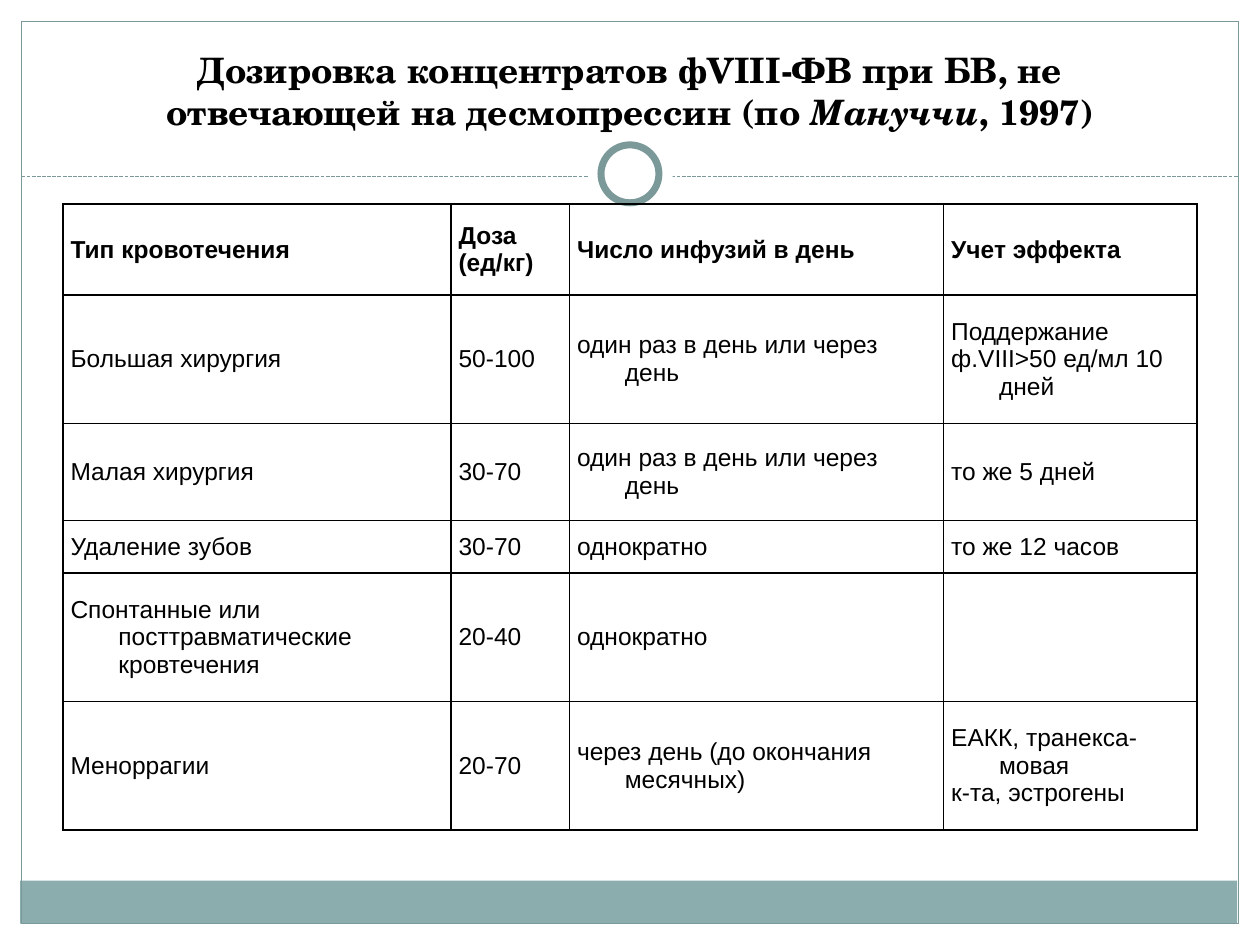
from lxml.etree import SubElement
from pptx import Presentation
from pptx.dml.color import RGBColor
from pptx.enum.dml import MSO_LINE
from pptx.enum.shapes import MSO_CONNECTOR, MSO_SHAPE
from pptx.enum.text import MSO_ANCHOR, PP_ALIGN
from pptx.oxml.ns import qn
from pptx.util import Inches, Pt

COLORS = {"white": "FFFFFF", "black": "000000", "band": "8CADAE", "frame": "7C999A"}
TITLE_FONT = "TeX Gyre Schola"
TABLE_FONT = "Arial"

TITLE_RUNS = [
    ("Дозировка концентратов фVIII-ФВ при БВ, не отвечающей на десмопрессин (по ", False),
    ("Мануччи", True),
    (", 1997)", False),
]
COLUMN_WIDTHS = [3.08, 0.94, 2.97, 2.01]
ROW_HEIGHTS = [0.72, 1.02, 0.77, 0.42, 1.02, 1.02]
DOSAGE_ROWS = [
    ["Тип кровотечения", "Доза\n(ед/кг)", "Число инфузий в день", "Учет эффекта"],
    ["Большая хирургия", "50-100", "один раз в день или через день",
     "Поддержание\nф.VIII>50 ед/мл 10 дней"],
    ["Малая хирургия", "30-70", "один раз в день или через день", "то же 5 дней"],
    ["Удаление зубов", "30-70", "однократно", "то же 12 часов"],
    ["Спонтанные или посттравматические кровтечения", "20-40", "однократно", ""],
    ["Меноррагии", "20-70", "через день (до окончания месячных)",
     "ЕАКК, транекса-мовая\nк-та, эстрогены"],
]


def rgb(name):
    return RGBColor.from_string(COLORS[name])


def style_font(font, name, size, bold):
    font.name = name
    font.size = Pt(size)
    font.bold = bold
    font.color.rgb = rgb("black")


def add_shape(slide, kind, box, fill=None, line=None, line_width=0.75):
    shape = slide.shapes.add_shape(kind, *map(Inches, box))
    shape.shadow.inherit = False
    if fill:
        shape.fill.solid()
        shape.fill.fore_color.rgb = rgb(fill)
    else:
        shape.fill.background()
    if line:
        shape.line.color.rgb = rgb(line)
        shape.line.width = Pt(line_width)
    else:
        shape.line.fill.background()


def add_dashed_line(slide, left, right, top):
    line = slide.shapes.add_connector(
        MSO_CONNECTOR.STRAIGHT, Inches(left), Inches(top), Inches(right), Inches(top))
    line.line.color.rgb = rgb("frame")
    line.line.width = Pt(0.75)
    line.line.dash_style = MSO_LINE.SQUARE_DOT
    properties = line._element.spPr
    properties.find(qn("a:ln")).find(qn("a:prstDash")).set("val", "sysDash")
    SubElement(properties, qn("a:effectLst"))


def add_title(slide):
    frame = slide.shapes.add_textbox(
        Inches(0.5), Inches(0.16), Inches(9), Inches(0.94)).text_frame
    frame.word_wrap = True
    frame.vertical_anchor = MSO_ANCHOR.BOTTOM
    paragraph = frame.paragraphs[0]
    paragraph.alignment = PP_ALIGN.CENTER
    style_font(paragraph.font, TITLE_FONT, 20, True)
    for text, italic in TITLE_RUNS:
        run = paragraph.add_run()
        run.text = text
        # Each run carries the font so that it holds in every viewer
        style_font(run.font, TITLE_FONT, 20, True)
        run.font.italic = italic


def set_borders(cell):
    properties = cell._tc.get_or_add_tcPr()
    for side in ("lnL", "lnR", "lnT", "lnB"):
        border = SubElement(properties, qn(f"a:{side}"), w=str(Pt(1)))
        fill = SubElement(border, qn("a:solidFill"))
        SubElement(fill, qn("a:srgbClr"), val=COLORS["black"])


def fill_cell(cell, text, bold):
    cell.text = text
    cell.vertical_anchor = MSO_ANCHOR.MIDDLE
    cell.margin_left = cell.margin_right = Inches(0.06)
    cell.margin_top = cell.margin_bottom = Inches(0.05)
    set_borders(cell)
    cell.fill.background()
    for paragraph in cell.text_frame.paragraphs:
        # Hanging indent
        properties = paragraph._p.get_or_add_pPr()
        properties.set("marL", str(Inches(0.38)))
        properties.set("indent", str(Inches(-0.38)))
        style_font(paragraph.font, TABLE_FONT, 14, bold)


def add_dosage_table(slide):
    table = slide.shapes.add_table(
        len(ROW_HEIGHTS), len(COLUMN_WIDTHS), Inches(0.5), Inches(1.62),
        Inches(sum(COLUMN_WIDTHS)), Inches(sum(ROW_HEIGHTS))).table
    table.horz_banding = False
    for column, width in zip(table.columns, COLUMN_WIDTHS):
        column.width = Inches(width)
    for index, (row, height) in enumerate(zip(table.rows, ROW_HEIGHTS)):
        row.height = Inches(height)
        for cell, text in zip(row.cells, DOSAGE_ROWS[index]):
            fill_cell(cell, text, bold=index == 0)


def main():
    presentation = Presentation()
    presentation.slide_width = Inches(10)
    presentation.slide_height = Inches(7.5)
    slide = presentation.slides.add_slide(presentation.slide_layouts[6])

    # Bottom band, frame and divider with its ring
    add_shape(slide, MSO_SHAPE.RECTANGLE, (0.16, 6.99, 9.66, 0.34), fill="band")
    add_shape(slide, MSO_SHAPE.RECTANGLE, (0.17, 0.17, 9.66, 7.16), line="frame")
    add_dashed_line(slide, 0.17, 9.83, 1.4)
    add_shape(slide, MSO_SHAPE.OVAL, (4.67, 1.05, 0.67, 0.67), fill="white")
    add_shape(slide, MSO_SHAPE.OVAL, (4.77, 1.15, 0.46, 0.46),
              fill="white", line="frame", line_width=4)

    # Content
    add_title(slide)
    add_dosage_table(slide)
    presentation.save("out.pptx")


if __name__ == "__main__":
    main()
